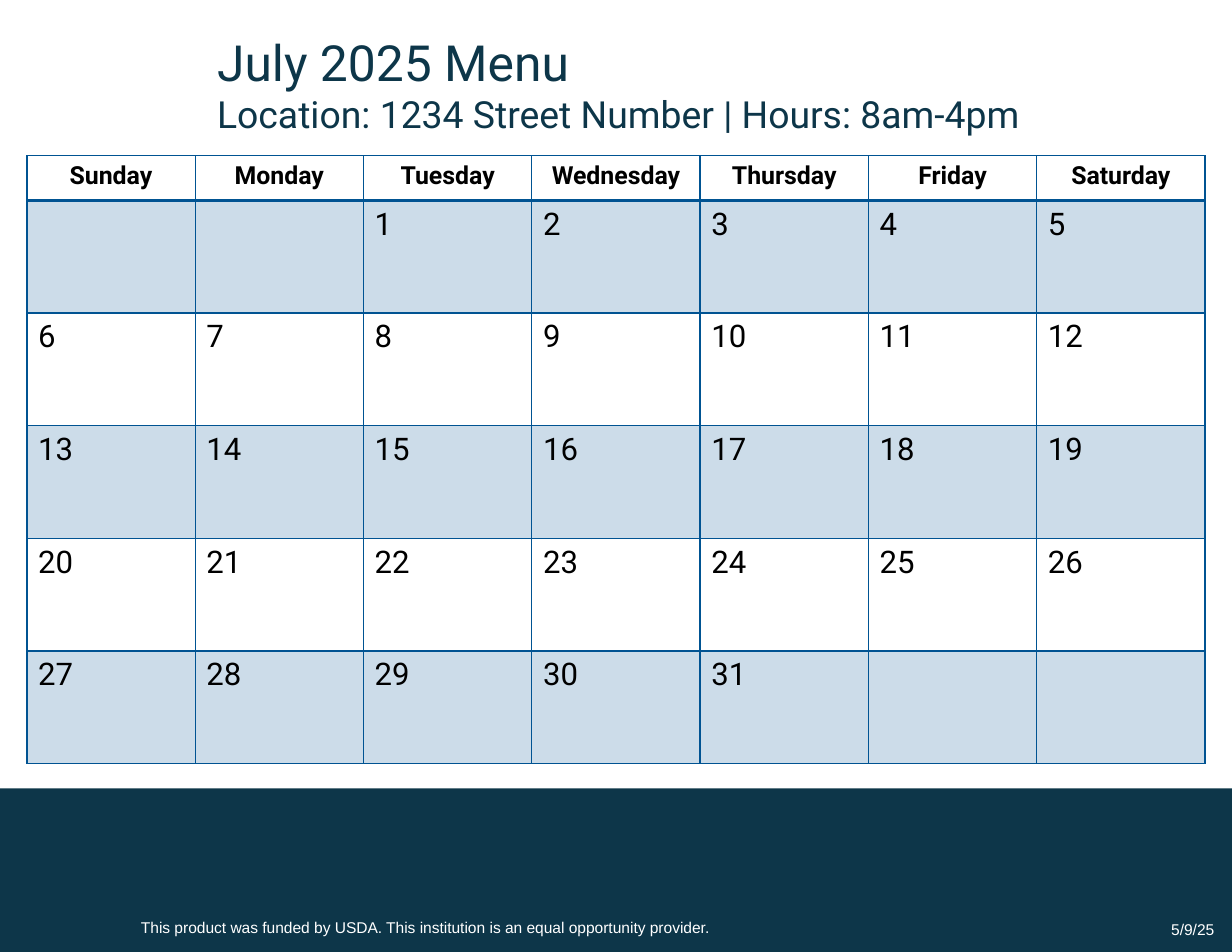
from pptx import Presentation
from pptx import util as u
from pptx.dml.color import RGBColor
from pptx.enum import shapes, text
from pptx.oxml.ns import qn
from lxml import etree

COLORS = {"navy": "0D3649", "blue": "005392", "white": "FFFFFF", "black": "000000"}
DAYS = ["Sunday", "Monday", "Tuesday", "Wednesday", "Thursday", "Friday", "Saturday"]
FIRST_WEEKDAY = 2
DAY_COUNT = 31
WEEK_COUNT = 5


def color(name):
    return RGBColor.from_string(COLORS[name])


def add_run(paragraph, words, size, font, color_name, bold=False):
    run = paragraph.add_run()
    run.text = words
    run.font.size = u.Pt(size)
    run.font.name = font
    run.font.bold = bold
    run.font.color.rgb = color(color_name)


def add_text(slide, box, lines, font, color_name, align=text.PP_ALIGN.LEFT,
             anchor=text.MSO_ANCHOR.TOP):
    shape = slide.shapes.add_textbox(*map(u.Inches, box))
    frame = shape.text_frame
    frame.word_wrap = True
    frame.vertical_anchor = anchor
    for index, (words, size) in enumerate(lines):
        paragraph = frame.add_paragraph() if index else frame.paragraphs[0]
        paragraph.alignment = align
        add_run(paragraph, words, size, font, color_name)


def add_footer_band(slide):
    band = slide.shapes.add_shape(shapes.MSO_SHAPE.RECTANGLE, 0, u.Inches(7.04),
                                  u.Inches(11), u.Inches(1.46))
    band.shadow.inherit = False
    band.fill.solid()
    band.fill.fore_color.rgb = color("navy")
    band.line.fill.background()


def set_borders(cell, widths):
    properties = cell._tc.get_or_add_tcPr()
    for side, width in zip("LRTB", widths):
        line = etree.SubElement(properties, qn(f"a:ln{side}"), w=str(u.Pt(width)))
        fill = etree.SubElement(line, qn("a:solidFill"))
        etree.SubElement(fill, qn("a:srgbClr"), val=COLORS["blue"])


def set_fill(cell, tinted):
    if not tinted:
        cell.fill.background()
        return
    cell.fill.solid()
    cell.fill.fore_color.rgb = color("blue")
    tint = cell._tc.tcPr.find(qn("a:solidFill")).find(qn("a:srgbClr"))
    etree.SubElement(tint, qn("a:alpha"), val="20000")


def add_calendar(slide):
    frame = slide.shapes.add_table(WEEK_COUNT + 1, len(DAYS), u.Inches(0.24), u.Inches(1.39),
                                   u.Inches(10.52), u.Inches(5.43))
    table = frame.table
    for index, row in enumerate(table.rows):
        row.height = u.Inches(1.006 if index else 0.4)
    for row in range(WEEK_COUNT + 1):
        for column, weekday in enumerate(DAYS):
            cell = table.cell(row, column)
            set_borders(cell, (1, 1, 2 if row == 1 else 1, 1 if row else 2))
            set_fill(cell, row % 2 == 1)
            paragraph = cell.text_frame.paragraphs[0]
            day = (row - 1) * len(DAYS) + column - FIRST_WEEKDAY + 1
            if row == 0:
                paragraph.alignment = text.PP_ALIGN.CENTER
                add_run(paragraph, weekday, 16, "Roboto", "black", True)
            elif 1 <= day <= DAY_COUNT:
                add_run(paragraph, str(day), 20, "Roboto", "black")


def main():
    presentation = Presentation()
    presentation.slide_width = u.Inches(11)
    presentation.slide_height = u.Inches(8.5)
    slide = presentation.slides.add_slide(presentation.slide_layouts[6])
    add_footer_band(slide)
    add_text(slide, (1.16, 8.15, 7.08, 0.27),
             [("This product was funded by USDA. "
               "This institution is an equal opportunity provider.", 10)],
             "Arial", "white")
    add_text(slide, (8.47, 8.07, 2.47, 0.45), [("5/9/25", 10)], "Arial", "white",
             text.PP_ALIGN.RIGHT, text.MSO_ANCHOR.MIDDLE)
    add_text(slide, (1.84, 0.23, 7.75, 1.04),
             [("July 2025 Menu", 32),
              ("Location: 1234 Street Number | Hours: 8am-4pm", 24)],
             "Roboto", "navy")
    add_calendar(slide)
    presentation.save("out.pptx")


if __name__ == "__main__":
    main()
